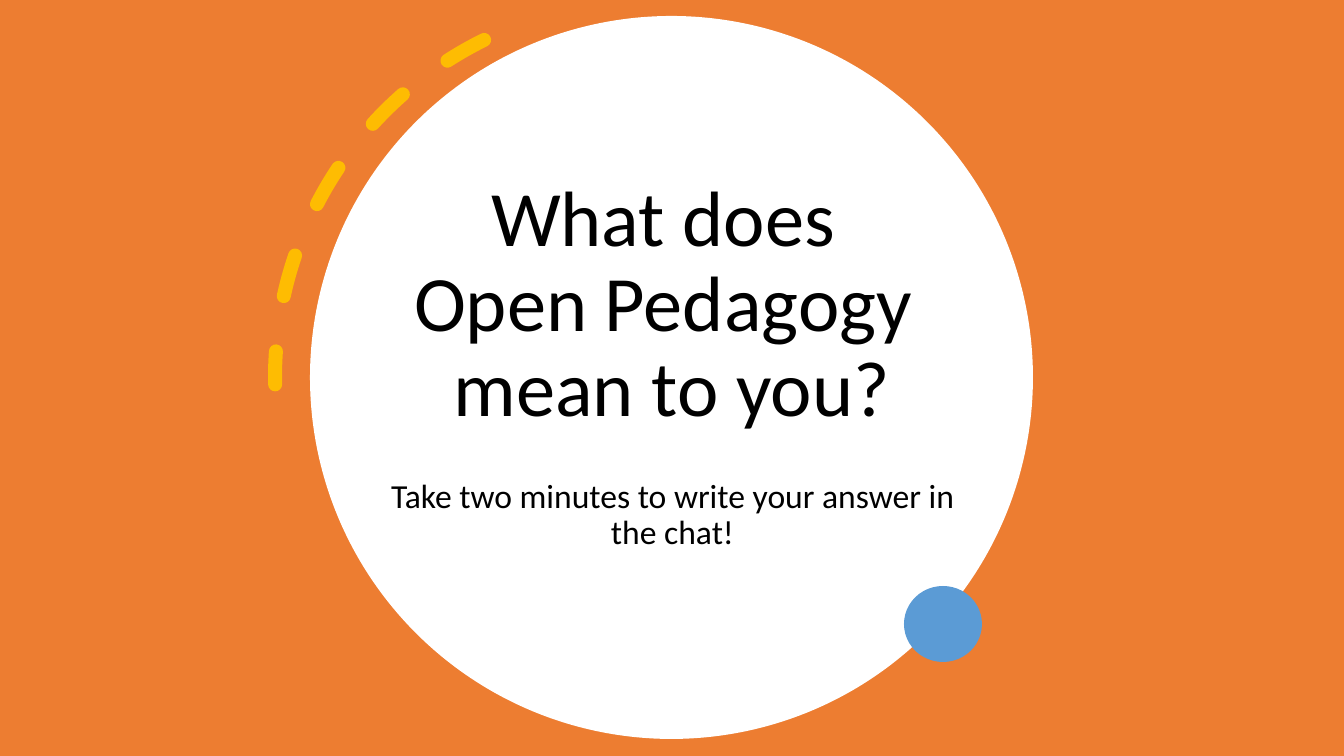
from pptx import Presentation
from pptx.dml.color import RGBColor
from pptx.enum.dml import MSO_LINE
from pptx.enum.shapes import MSO_SHAPE
from pptx.enum.text import MSO_ANCHOR, PP_ALIGN
from pptx.oxml.ns import qn
from pptx.util import Pt
from lxml import etree

RECTANGLE, OVAL, ARC = MSO_SHAPE.RECTANGLE, MSO_SHAPE.OVAL, MSO_SHAPE.ARC
TOP, BOTTOM = MSO_ANCHOR.TOP, MSO_ANCHOR.BOTTOM
CENTER = PP_ALIGN.CENTER
DASH = MSO_LINE.DASH

PAGE_WIDTH, PAGE_HEIGHT = 1344, 756
EMU_PER_PX = 12192000 / PAGE_WIDTH
FONT = "Calibri"
COLORS = {
    "orange": "ED7D31",
    "white": "FFFFFF",
    "black": "000000",
    "yellow": "FFC000",
    "blue": "5B9BD5",
}


def px(length):
    """Turn pixels into EMU."""
    return round(length * EMU_PER_PX)


def color(name):
    """Look up a palette colour."""
    return RGBColor.from_string(COLORS[name])


def add_filled(page, kind, box, fill):
    """Add a borderless shape with a solid fill."""
    shape = page.shapes.add_shape(kind, *map(px, box))
    shape.shadow.inherit = False
    shape.fill.solid()
    shape.fill.fore_color.rgb = color(fill)
    shape.line.fill.background()
    return shape


def add_text(page, box, lines, size, anchor=TOP, space_before=0):
    """Add one centred paragraph with the given forced lines."""
    frame = page.shapes.add_textbox(*map(px, box)).text_frame
    frame.word_wrap = True
    frame.vertical_anchor = anchor
    para = frame.paragraphs[0]
    para.alignment = CENTER
    para.line_spacing = 0.9
    para.space_before = Pt(space_before)
    for index, line in enumerate(lines):
        if index:
            para.add_line_break()
        span = para.add_run()
        span.text = line
        span.font.name = FONT
        span.font.size = Pt(size)
        span.font.color.rgb = color("black")


def add_dashed_arc(page, box):
    """Add the round-capped dashed arc beside the disc."""
    arc = page.shapes.add_shape(ARC, *map(px, box))
    arc.shadow.inherit = False
    arc.adjustments[0] = 162
    arc.adjustments[1] = 200.93
    arc.rotation = 153.7
    arc.element.spPr.find(qn("a:xfrm")).set("flipV", "1")
    arc.fill.background()
    arc.line.width = Pt(10)
    arc.line.color.rgb = color("yellow")
    arc.line.dash_style = DASH
    outline = arc.element.spPr.find(qn("a:ln"))
    outline.set("cap", "rnd")
    tint = outline.find(qn("a:solidFill")).find(qn("a:srgbClr"))
    etree.SubElement(tint, qn("a:alpha")).set("val", "95000")


def add_question(page, box):
    """Place the disc, question, prompt and ornaments in a box."""
    left, top, width, height = box
    add_filled(page, OVAL, box, "white")
    add_text(page, (left - 136, top + 145, width + 273, 277),
             ["What does ", "Open Pedagogy ", "mean to you?"], 56, anchor=BOTTOM)
    add_text(page, (left + 56, top + 458, width - 110, 169),
             ["Take two minutes to write your answer in the chat!"], 24, space_before=10)
    add_dashed_arc(page, (left - 35, top - 15, width + 28, height + 28))
    add_filled(page, OVAL, (left + 594, top + 570, 78, 76), "blue")


def main():
    """Build and save the deck."""
    deck = Presentation()
    deck.slide_width, deck.slide_height = px(PAGE_WIDTH), px(PAGE_HEIGHT)
    page = deck.slides.add_slide(deck.slide_layouts[6])
    add_filled(page, RECTANGLE, (0, 0, PAGE_WIDTH, PAGE_HEIGHT), "orange")
    add_question(page, (310, 16, 723, 723))
    deck.save("out.pptx")


if __name__ == "__main__":
    main()
